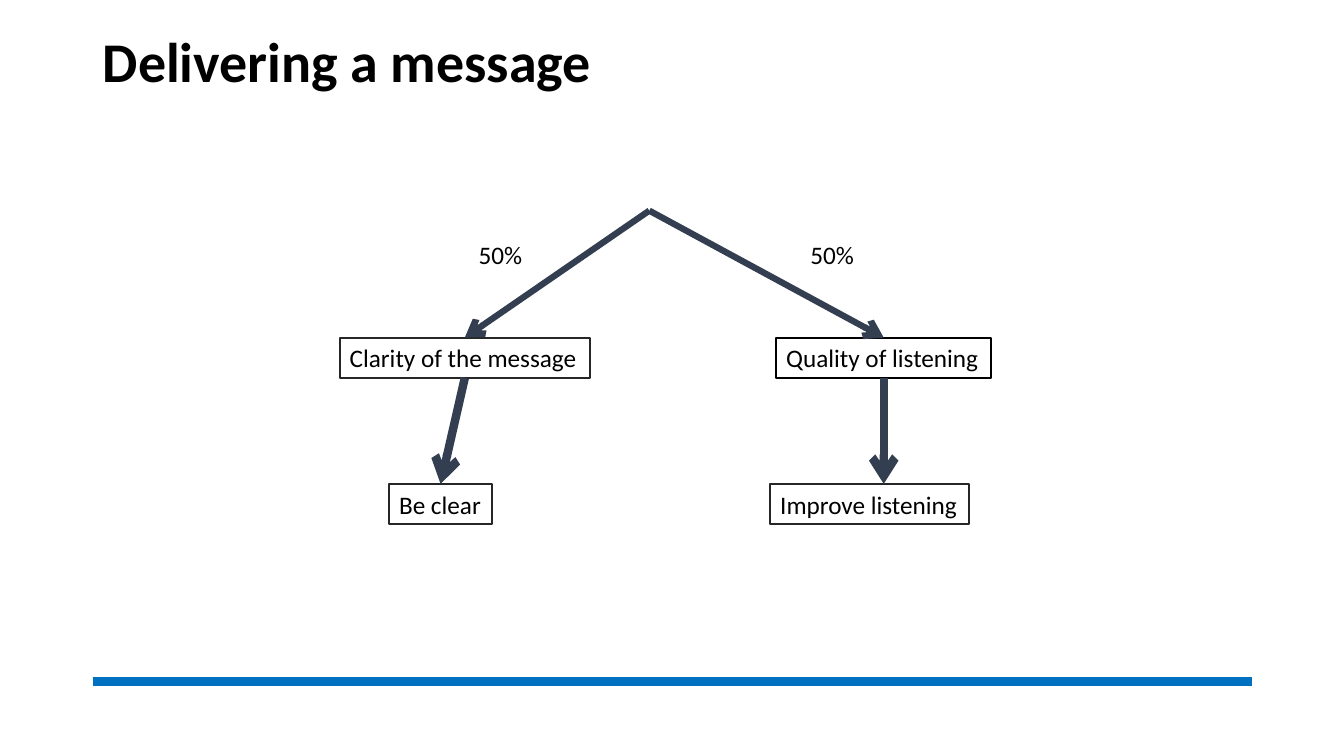
from lxml.etree import SubElement
from pptx import Presentation
from pptx.dml.color import RGBColor
from pptx.enum.shapes import MSO_CONNECTOR, MSO_SHAPE
from pptx.enum.text import MSO_ANCHOR, MSO_AUTO_SIZE, PP_ALIGN
from pptx.oxml.ns import qn
from pptx.util import Inches, Pt

BLACK = RGBColor(0x00, 0x00, 0x00)
CHARCOAL = RGBColor(0x26, 0x26, 0x26)
SLATE = RGBColor(0x33, 0x3F, 0x50)
BLUE = RGBColor(0x00, 0x70, 0xC0)
ROW_H = 0.4


def style_text(shape, text, size, bold=False):
    """Write left-aligned Calibri text into a shape."""
    tf = shape.text_frame
    tf.text = text
    p = tf.paragraphs[0]
    p.alignment = PP_ALIGN.LEFT
    font = p.runs[0].font
    font.name = "Calibri"
    font.size = Pt(size)
    font.bold = bold
    font.color.rgb = BLACK
    return tf


def add_line(s, start, end, color, width, arrow=False):
    """Draw a straight line, with an optional arrowhead at its end."""
    line = s.shapes.add_connector(
        MSO_CONNECTOR.STRAIGHT, *[Inches(v) for v in (*start, *end)])
    line.line.color.rgb = color
    line.line.width = Pt(width)
    if arrow:
        ln = line.line._get_or_add_ln()
        SubElement(ln, qn("a:tailEnd"), type="arrow")
    SubElement(line._element.spPr, qn("a:effectLst"))


def add_label(s, text, x, y, w, border=None):
    """Place a one-line label, framed when a border colour is given."""
    box = [Inches(v) for v in (x, y, w, ROW_H)]
    if border is None:
        sp = s.shapes.add_textbox(*box)
    else:
        sp = s.shapes.add_shape(MSO_SHAPE.RECTANGLE, *box)
        sp.shadow.inherit = False
        sp.fill.background()
        sp.line.color.rgb = border
        sp.line.width = Pt(1.5)
    tf = style_text(sp, text, 18)
    tf.word_wrap = False
    tf.auto_size = MSO_AUTO_SIZE.SHAPE_TO_FIT_TEXT


def add_title(s, text, x, y, w, h):
    """Fill and place the title placeholder."""
    title = s.shapes.title
    title.left, title.top, title.width, title.height = [
        Inches(v) for v in (x, y, w, h)]
    tf = style_text(title, text, 40, bold=True)
    tf.auto_size = MSO_AUTO_SIZE.NONE
    tf.vertical_anchor = MSO_ANCHOR.MIDDLE
    tf.paragraphs[0].line_spacing = 0.9


def add_branch(s, apex, share, factor, action, border):
    """Draw one branch from the apex: share, factor and action."""
    top = apex[1]
    share_x, (factor_text, factor_x, factor_w) = share, factor
    action_text, action_x, action_w = action
    factor_y, action_y = top + 1.26, top + 2.71
    factor_mid = factor_x + factor_w / 2
    action_mid = factor_mid if action_x > apex[0] else action_x + action_w / 2
    add_label(s, factor_text, factor_x, factor_y, factor_w, border)
    add_label(s, action_text, action_x, action_y, action_w, CHARCOAL)
    add_line(s, (factor_mid, factor_y + ROW_H), (action_mid, action_y),
             SLATE, 6, arrow=True)
    add_line(s, apex, (factor_mid, factor_y), SLATE, 4.5, arrow=True)
    add_label(s, "50%", share_x, top + 0.24, 0.64)


def main():
    """Build the slide and save it."""
    prs = Presentation()
    prs.slide_width, prs.slide_height = Inches(13.33), Inches(7.5)
    s = prs.slides.add_slide(prs.slide_layouts[5])
    left, width = 0.92, 11.5
    add_line(s, (left, 6.76), (left + width, 6.76), BLUE, 6)
    add_title(s, "Delivering a message", left, 0.27, width, 0.73)
    apex = (6.44, 2.09)
    add_branch(s, apex, 4.65, ("Clarity of the message", 3.37, 2.48),
               ("Be clear", 3.86, 1.02), CHARCOAL)
    add_branch(s, apex, 7.94, ("Quality of listening", 7.7, 2.13),
               ("Improve listening", 7.64, 1.97), BLACK)
    prs.save("out.pptx")


if __name__ == "__main__":
    main()
